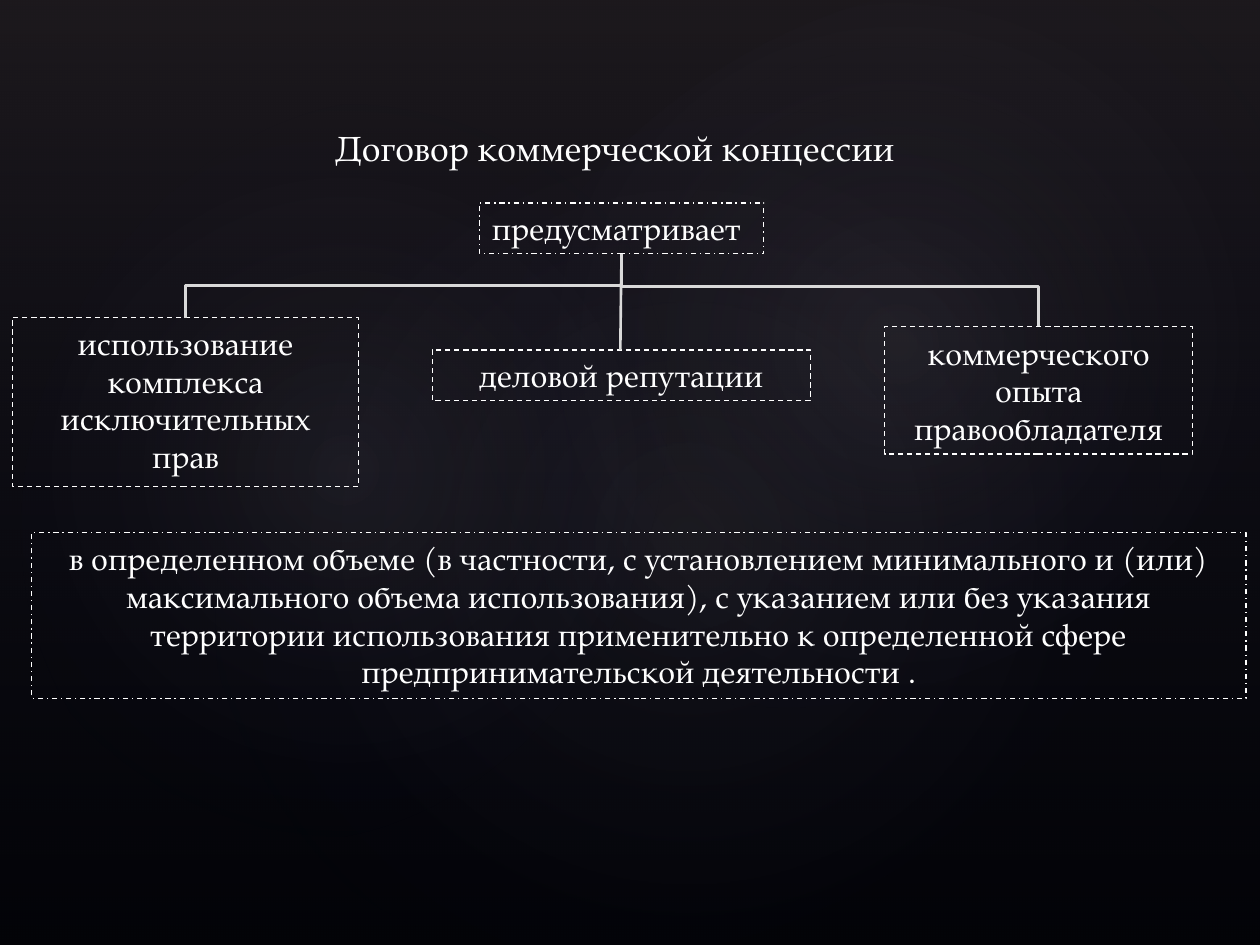
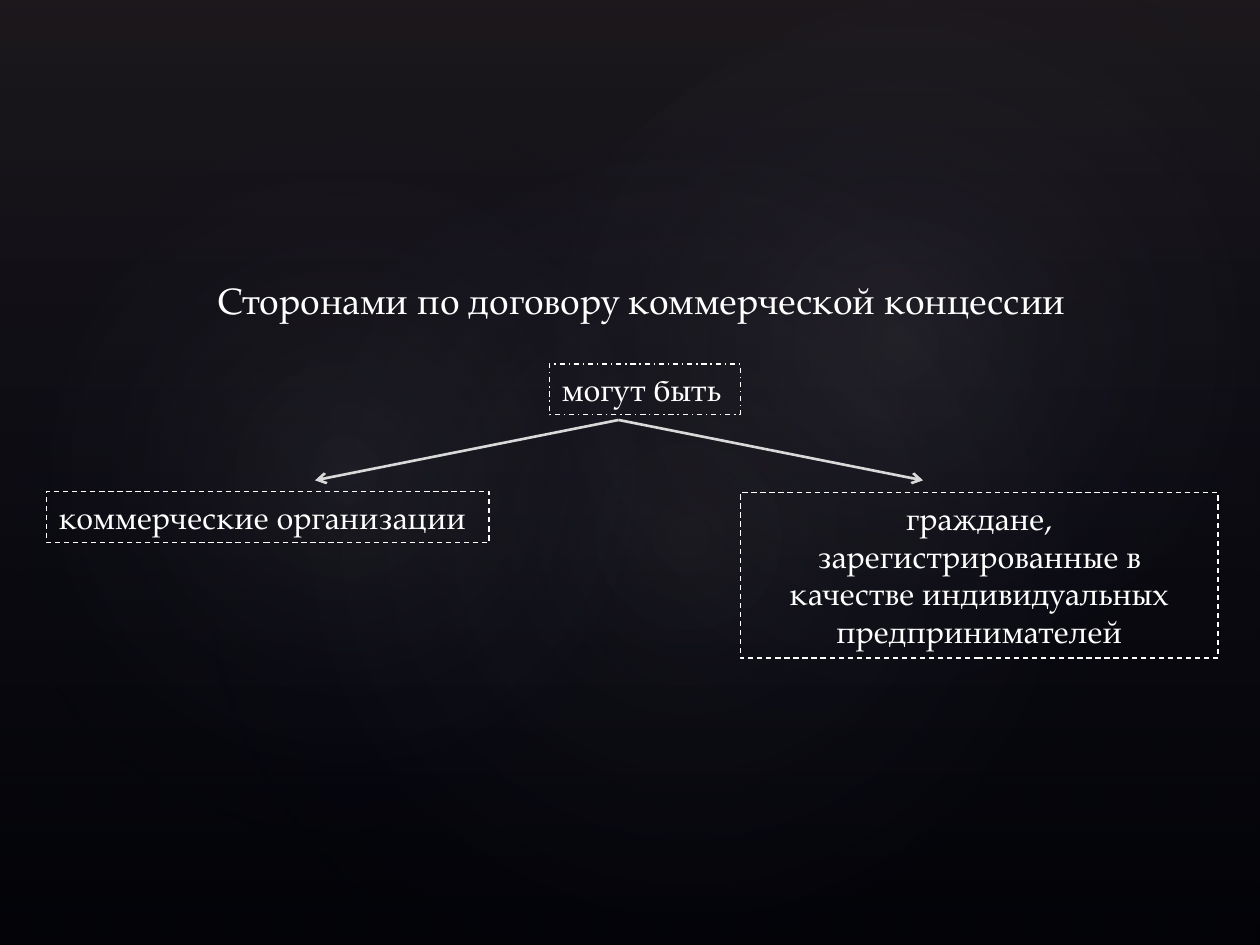
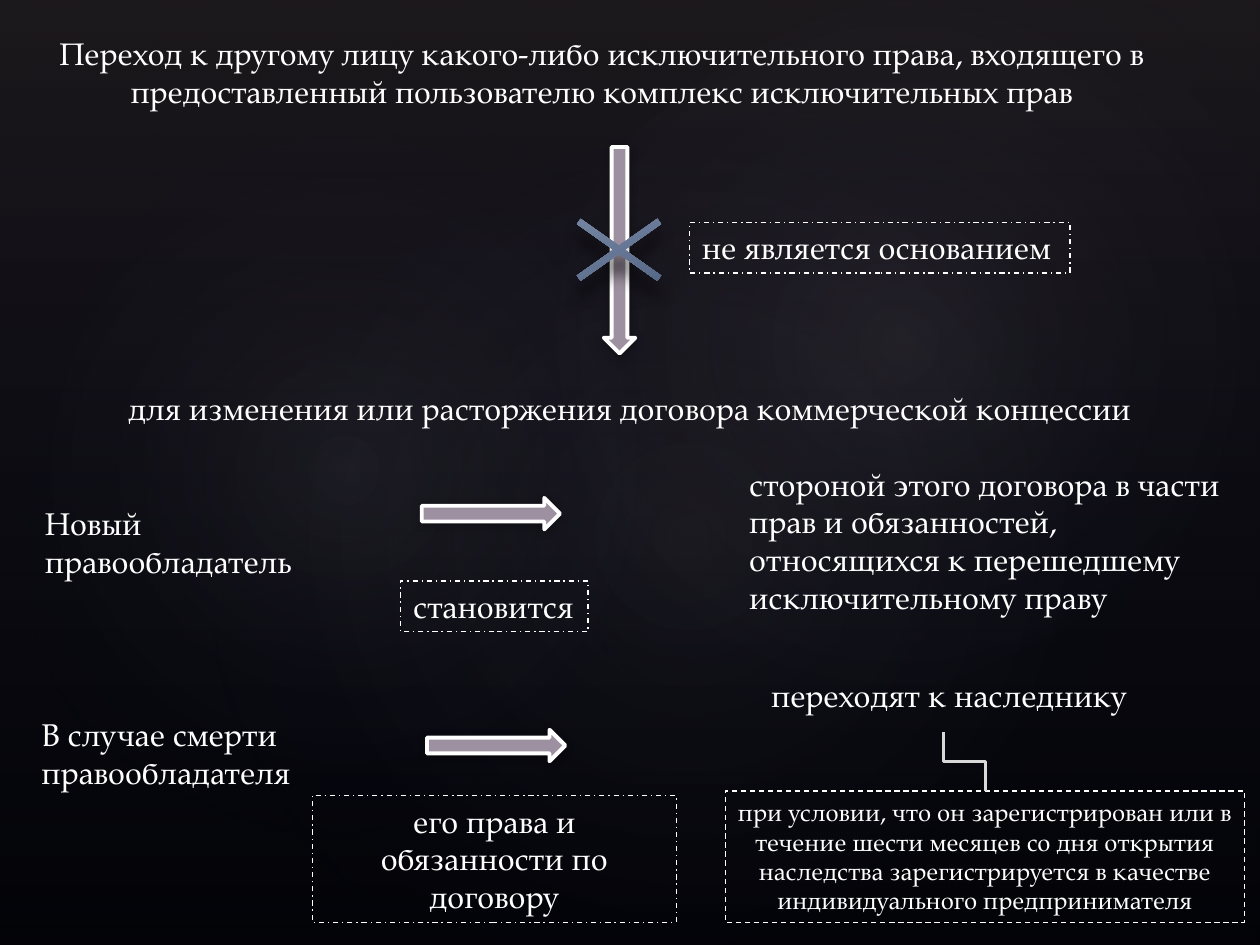
from lxml.etree import SubElement
from pptx import Presentation
from pptx.dml.color import RGBColor
from pptx.enum.dml import MSO_LINE
from pptx.enum.shapes import MSO_CONNECTOR, MSO_SHAPE
from pptx.enum.text import MSO_ANCHOR, MSO_AUTO_SIZE, PP_ALIGN
from pptx.oxml import parse_xml
from pptx.oxml.ns import nsdecls, qn
from pptx.util import Pt

FONT = "TeX Gyre Pagella"
WHITE, CONNECTOR, ARROW = "FFFFFF", "D9D9D9", "9D90A0"
DASH, DASH_DOT = MSO_LINE.DASH, MSO_LINE.DASH_DOT

SHADE = [(0, "504652", 36), (100, "242852", 10)]
CROSS = [(0, "7F8FA9", 100), (100, "4B5F7F", 100)]
GLOWS = [
    ((108, 82, 570, 449), 328.7, 7),
    ((-21.5, 92, 436, 353), 294.3, 8),
    ((258, 9.5, 510.5, 374.5), 328.7, 8),
]

LAYOUTS = {
    "line": (False, PP_ALIGN.LEFT, MSO_ANCHOR.TOP, True),
    "left": (True, PP_ALIGN.LEFT, MSO_ANCHOR.TOP, True),
    "center": (True, PP_ALIGN.CENTER, MSO_ANCHOR.TOP, True),
    "middle": (True, PP_ALIGN.CENTER, MSO_ANCHOR.MIDDLE, True),
    "title": (True, PP_ALIGN.LEFT, MSO_ANCHOR.MIDDLE, False),
    "centered title": (True, PP_ALIGN.CENTER, MSO_ANCHOR.MIDDLE, False),
}

SLIDES = [
    {
        "texts": [
            ("Договор коммерческой концессии", (184.5, 69, 340.5, 31.5), "line", None, 20),
            ("предусматривает", (274, 116, 162.5, 29), "line", DASH_DOT, 18),
            ("использование комплекса исключительных прав", (7, 181.5, 198, 96.5), "center", DASH, 18),
            ("деловой репутации", (247, 200, 216, 29), "center", DASH, 18),
            ("коммерческого опыта правообладателя", (505.5, 186.5, 176, 73), "middle", DASH, 18),
            ("в определенном объеме (в частности, с установлением минимального и (или) "
             "максимального объема использования), с указанием или без указания территории "
             "использования применительно к определенной сфере предпринимательской "
             "деятельности .", (18, 304.5, 694, 94.5), "center", DASH_DOT, 18),
        ],
        "elbows": [((355, 145), (106, 181.5), 0.5), ((355, 145), (593.5, 186.5), 0.45)],
        "lines": [((355, 154), (354.5, 200), False)],
    },
    {
        "texts": [
            ("Сторонами по договору коммерческой концессии", (117.5, 132, 515, 79), "title", None, 21),
            ("могут быть", (314, 208, 109, 29), "line", DASH_DOT, 18),
            ("коммерческие организации", (26.5, 281, 253, 29), "line", DASH, 18),
            ("граждане, зарегистрированные в качестве индивидуальных предпринимателей",
             (423, 281.5, 273, 94.5), "center", DASH, 18),
        ],
        "lines": [((353.5, 240), (180, 274.5), True), ((353.5, 240), (527.5, 274.5), True)],
    },
    {
        "texts": [
            ("Переход к другому лицу какого-либо исключительного права, входящего в "
             "предоставленный пользователю комплекс исключительных прав",
             (21, 10, 646.5, 62.5), "centered title", None, 17.9),
            ("для изменения или расторжения договора коммерческой концессии",
             (0, 219, 720, 29), "center", None, 18),
            ("не является основанием", (394, 127, 217.5, 29), "line", DASH_DOT, 18),
            ("Новый правообладатель", (18.5, 284.5, 159, 51), "left", None, 18),
            ("становится", (229, 332, 107, 29), "line", DASH_DOT, 18),
            ("стороной этого договора в части прав и обязанностей, относящихся к "
             "перешедшему исключительному праву", (421, 262, 284, 94.5), "left", None, 18),
            ("В случае смерти правообладателя", (16.5, 405, 228, 51), "left", None, 18),
            ("его права и обязанности по договору", (178.5, 454.5, 208, 72.5), "center", DASH_DOT, 18),
            ("переходят к наследнику", (433.5, 383, 233.5, 29), "left", None, 18),
            ("при условии, что он зарегистрирован или в течение шести месяцев со дня "
             "открытия наследства зарегистрируется в качестве индивидуального "
             "предпринимателя", (414.5, 452, 296.5, 75), "center", DASH, 14),
        ],
        "arrows": [((295, 134, 118, 18), 90), ((241, 284.5, 79, 18), 0), ((244, 417, 79, 18), 0)],
        "crosses": [(309.5, 111.5, 88.5, 62.5)],
        "elbows": [((539, 418.5), (563, 452), 0.5)],
    },
]


def color(value):
    return RGBColor.from_string(value)


def points(values):
    return [Pt(value) for value in values]


def add_plain_shape(slide, kind, box, rotation=0):
    shape = slide.shapes.add_shape(kind, *points(box))
    shape.rotation = rotation
    shape.shadow.inherit = False
    shape.line.fill.background()
    return shape


def set_gradient(shape, stops, angle=None):
    stop_xml = "".join(
        f'<a:gs pos="{position * 1000}"><a:srgbClr val="{value}">'
        f'<a:alpha val="{opacity * 1000}"/></a:srgbClr></a:gs>'
        for position, value, opacity in stops
    )
    if angle is None:
        direction = ('<a:path path="circle"><a:fillToRect l="50000" t="50000" '
                     'r="50000" b="50000"/></a:path>')
    else:
        direction = f'<a:lin ang="{angle * 60000}" scaled="0"/>'
    gradient = parse_xml(
        f'<a:gradFill {nsdecls("a")} rotWithShape="1"><a:gsLst>{stop_xml}</a:gsLst>'
        f'{direction}</a:gradFill>'
    )
    shape.element.spPr.find(qn("a:prstGeom")).addnext(gradient)


def set_shadow(shape, opacity, blur, distance):
    effects = shape.element.spPr.find(qn("a:effectLst"))
    effects.append(parse_xml(
        f'<a:outerShdw {nsdecls("a")} blurRad="{Pt(blur)}" dist="{Pt(distance)}" '
        f'dir="5400000" rotWithShape="0"><a:srgbClr val="000000">'
        f'<a:alpha val="{opacity * 1000}"/></a:srgbClr></a:outerShdw>'
    ))


def add_backdrop(presentation, slide):
    master = presentation.slide_master
    master.background.fill.solid()
    master.background.fill.fore_color.rgb = color("000000")
    shade = add_plain_shape(slide, MSO_SHAPE.RECTANGLE, (0, 0, 720, 540))
    set_gradient(shade, SHADE, 90)
    backdrop = [shade]
    for box, rotation, opacity in GLOWS:
        glow = add_plain_shape(slide, MSO_SHAPE.OVAL, box, rotation)
        set_gradient(glow, [(0, "C4BCC6", opacity), (58, "242852", 0)])
        backdrop.append(glow)
    for index, shape in enumerate(backdrop, start=2):
        master.element.cSld.spTree.insert(index, shape.element)


def add_text(slide, text, box, layout, border, size):
    wrap, alignment, anchor, grows = LAYOUTS[layout]
    shape = slide.shapes.add_textbox(*points(box))
    if border is not None:
        shape.line.color.rgb = color(WHITE)
        shape.line.width = Pt(0.75)
        shape.line.dash_style = border
    text_frame = shape.text_frame
    text_frame.text = text
    text_frame.word_wrap = wrap
    text_frame.vertical_anchor = anchor
    text_frame.auto_size = MSO_AUTO_SIZE.SHAPE_TO_FIT_TEXT if grows else MSO_AUTO_SIZE.NONE
    paragraph = text_frame.paragraphs[0]
    paragraph.alignment = alignment
    font = paragraph.runs[0].font
    font.name, font.size = FONT, Pt(size)
    font.color.rgb = color(WHITE)


def add_line(slide, kind, start, end, arrowhead=False):
    connector = slide.shapes.add_connector(kind, *points(start + end))
    connector.line.color.rgb = color(CONNECTOR)
    connector.line.width = Pt(1.5)
    properties = connector.element.spPr
    if arrowhead:
        SubElement(properties.find(qn("a:ln")), qn("a:tailEnd"), type="arrow")
    SubElement(properties, qn("a:effectLst"))
    return connector


def add_elbow(slide, start, end, bend):
    (x1, y1), (x2, y2) = start, end
    center_x, center_y = (x1 + x2) / 2, (y1 + y2) / 2
    half_width, half_height = (y2 - y1) / 2, abs(x2 - x1) / 2
    connector = add_line(
        slide, MSO_CONNECTOR.ELBOW,
        (center_x - half_width, center_y - half_height),
        (center_x + half_width, center_y + half_height),
    )
    properties = connector.element.spPr
    frame = properties.find(qn("a:xfrm"))
    if x2 < x1:
        frame.set("rot", "5400000")
    else:
        frame.set("rot", "16200000")
        frame.set("flipH", "1")
    guides = properties.find(qn("a:prstGeom")).get_or_add_avLst()
    SubElement(guides, qn("a:gd"), name="adj1", fmla=f"val {round(bend * 100000)}")


def add_arrow(slide, box, rotation):
    arrow = add_plain_shape(slide, MSO_SHAPE.RIGHT_ARROW, box, rotation)
    arrow.fill.solid()
    arrow.fill.fore_color.rgb = color(ARROW)
    arrow.line.color.rgb = color(WHITE)
    arrow.line.width = Pt(2.25)
    set_shadow(arrow, 32, 5, 1)


def add_cross(slide, box):
    cross = add_plain_shape(slide, MSO_SHAPE.MATH_MULTIPLY, box)
    cross.adjustments[0] = 0.06
    set_gradient(cross, CROSS, 69)
    set_shadow(cross, 70, 9, 9)


def main():
    presentation = Presentation()
    presentation.slide_width, presentation.slide_height = Pt(720), Pt(540)
    for number, content in enumerate(SLIDES):
        slide = presentation.slides.add_slide(presentation.slide_layouts[6])
        if number == 0:
            add_backdrop(presentation, slide)
        for text in content["texts"]:
            add_text(slide, *text)
        for arrow in content.get("arrows", []):
            add_arrow(slide, *arrow)
        for box in content.get("crosses", []):
            add_cross(slide, box)
        for elbow in content.get("elbows", []):
            add_elbow(slide, *elbow)
        for start, end, arrowhead in content.get("lines", []):
            add_line(slide, MSO_CONNECTOR.STRAIGHT, start, end, arrowhead)
    presentation.save("out.pptx")


if __name__ == "__main__":
    main()
